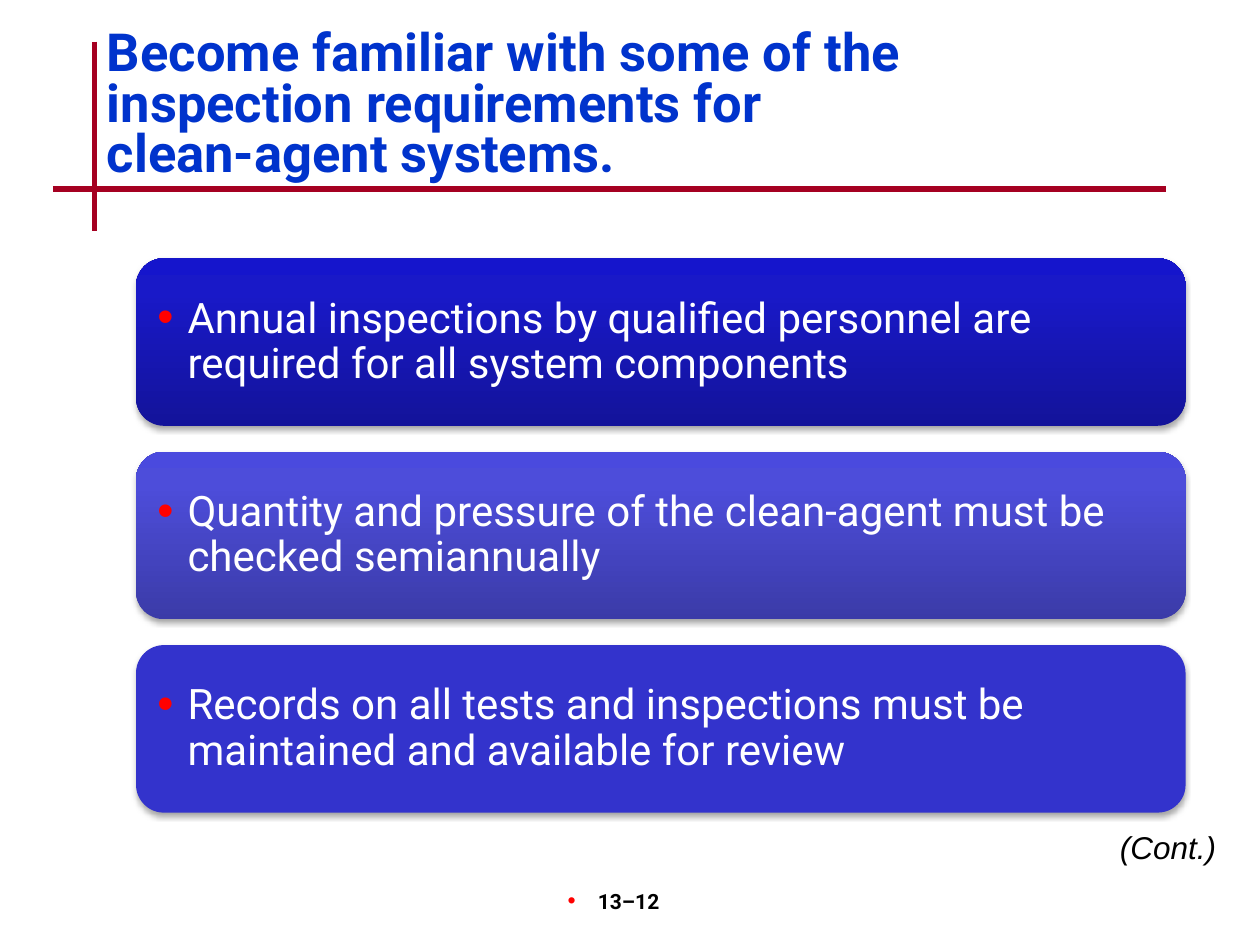
from dataclasses import dataclass
from typing import Optional

from lxml.etree import SubElement
from pptx import Presentation
from pptx.dml.color import RGBColor
from pptx.enum.shapes import MSO_CONNECTOR, MSO_SHAPE
from pptx.enum.text import MSO_ANCHOR, PP_ALIGN
from pptx.oxml import parse_xml
from pptx.oxml.ns import nsdecls, qn
from pptx.util import Inches, Pt

COLORS = {
    "rule": "A50021", "title": "0033CC", "bullet": "FF0000",
    "card": "3333CC", "white": "FFFFFF", "black": "000000",
}


@dataclass
class Card:
    text: str
    stops: Optional[dict[int, str]] = None  # percent: colour, bottom to top


CARDS = [
    Card("Annual inspections by qualified personnel are required for all system components",
         {0: "13139A", 80: "1919C8", 100: "1515CC"}),
    Card("Quantity and pressure of the clean-agent must be checked semiannually",
         {0: "3B3BA8", 80: "4D4DDA", 100: "4A4ADE"}),
    Card("Records on all tests and inspections must be maintained and available for review"),
]
LEFT, TOP, WIDTH, HEIGHT, PITCH = 1.08, 2.05, 8.33, 1.33, 1.535


def paint(name: str) -> RGBColor:
    return RGBColor.from_string(COLORS[name])


def add_bullet(para, indent: float, size: int) -> None:
    props = para._p.get_or_add_pPr()
    props.set("marL", str(Inches(indent)))
    props.set("indent", str(-Inches(indent)))
    color = SubElement(props, qn("a:buClr"))
    SubElement(color, qn("a:srgbClr"), val=COLORS["bullet"])
    SubElement(props, qn("a:buSzPct"), val=str(size * 1000))
    SubElement(props, qn("a:buFont"), typeface="Arial")
    SubElement(props, qn("a:buChar"), char="•")


def add_text(shapes, text: str, left: float, top: float, width: float, height: float, *,
             size: int, color: str, font: str = "Roboto", bold: bool = False,
             italic: bool = False, align=PP_ALIGN.LEFT, anchor=MSO_ANCHOR.TOP,
             space: Optional[float] = None, bullet: Optional[int] = None,
             pad: float = 0.05, right: float = 0.1) -> None:
    box = shapes.add_textbox(Inches(left), Inches(top), Inches(width), Inches(height))
    frame = box.text_frame
    frame.word_wrap = True
    frame.vertical_anchor = anchor
    frame.margin_left, frame.margin_right = Inches(0.1), Inches(right)
    frame.margin_top = frame.margin_bottom = Inches(pad)
    para = frame.paragraphs[0]
    para.text = text
    para.alignment = align
    if space:
        para.line_spacing = space
    if bullet:
        add_bullet(para, 0.24, bullet)
    for run in para.runs:
        run.font.name, run.font.size = font, Pt(size)
        run.font.bold, run.font.italic = bold, italic
        run.font.color.rgb = paint(color)


def add_rule(shapes, x1: float, y1: float, x2: float, y2: float) -> None:
    rule = shapes.add_connector(MSO_CONNECTOR.STRAIGHT, Inches(x1), Inches(y1),
                                Inches(x2), Inches(y2))
    rule.line.color.rgb = paint("rule")
    rule.line.width = Pt(3)
    SubElement(rule._element.spPr, qn("a:effectLst"))


def add_card(shapes, card: Card, top: float) -> None:
    shape = shapes.add_shape(MSO_SHAPE.ROUNDED_RECTANGLE, Inches(LEFT), Inches(top),
                             Inches(WIDTH), Inches(HEIGHT))
    shape.line.fill.background()
    shape.fill.solid()
    shape.fill.fore_color.rgb = paint("card")
    props = shape._element.spPr
    if card.stops:
        stops = "".join(f'<a:gs pos="{pos * 1000}"><a:srgbClr val="{color}"/></a:gs>'
                        for pos, color in card.stops.items())
        grad = parse_xml(f'<a:gradFill {nsdecls("a")} rotWithShape="1"><a:gsLst>{stops}'
                         '</a:gsLst><a:lin ang="16200000" scaled="0"/></a:gradFill>')
        props.replace(props.find(qn("a:solidFill")), grad)
    # Soft shadow straight below
    props.append(parse_xml(
        f'<a:effectLst {nsdecls("a")}><a:outerShdw blurRad="{Pt(3.1)}" dist="{Pt(1.8)}" '
        f'dir="5400000" rotWithShape="0"><a:srgbClr val="{COLORS["black"]}">'
        '<a:alpha val="35000"/></a:srgbClr></a:outerShdw></a:effectLst>'))
    add_text(shapes, card.text, LEFT + 0.07, top + 0.065, WIDTH - 0.13, HEIGHT - 0.13,
             size=24, color="white", anchor=MSO_ANCHOR.MIDDLE, space=0.9,
             bullet=110, pad=0.1)


def main() -> None:
    deck = Presentation()
    deck.slide_width, deck.slide_height = Inches(10), Inches(7.5)
    shapes = deck.slides.add_slide(deck.slide_layouts[6]).shapes

    # Crossed rules
    add_rule(shapes, 0.75, 0.33, 0.75, 1.83)
    add_rule(shapes, 0.42, 1.5, 9.25, 1.5)

    # Page number and title
    add_text(shapes, "13–12", 3.92, 7, 2.08, 0.5, size=12, color="black", bold=True,
             align=PP_ALIGN.CENTER, bullet=110, right=0.28)
    add_text(shapes, "Become familiar with some of the inspection requirements for"
             "\vclean-agent systems.", 0.75, 0.2, 8.5, 1, size=30, color="title",
             bold=True, space=0.8)

    # Requirement cards
    group = shapes.add_group_shape()
    for i, card in enumerate(CARDS):
        add_card(group.shapes, card, TOP + i * PITCH)

    # Continuation mark
    add_text(shapes, "(Cont.)", 8.08, 6.52, 1.67, 0.4, size=18, color="black",
             font="Arial", italic=True, align=PP_ALIGN.RIGHT)
    deck.save("out.pptx")


if __name__ == "__main__":
    main()
